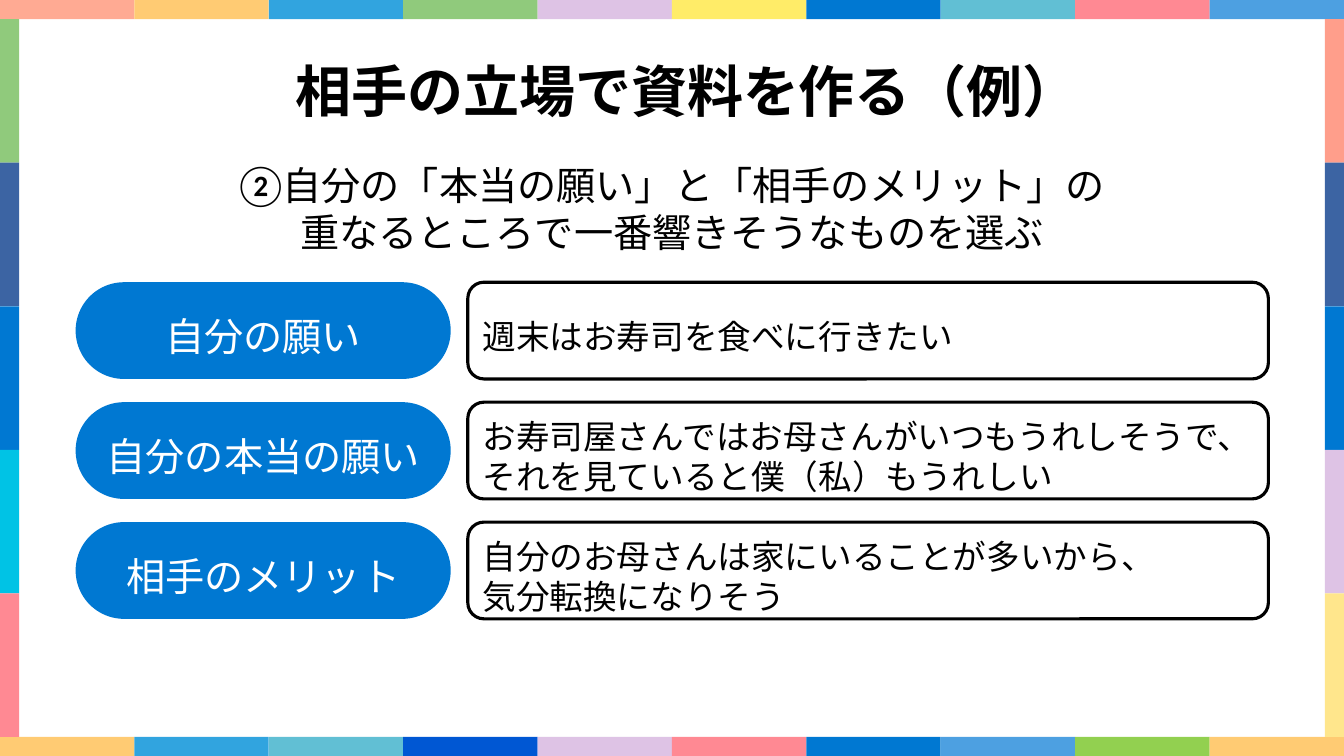
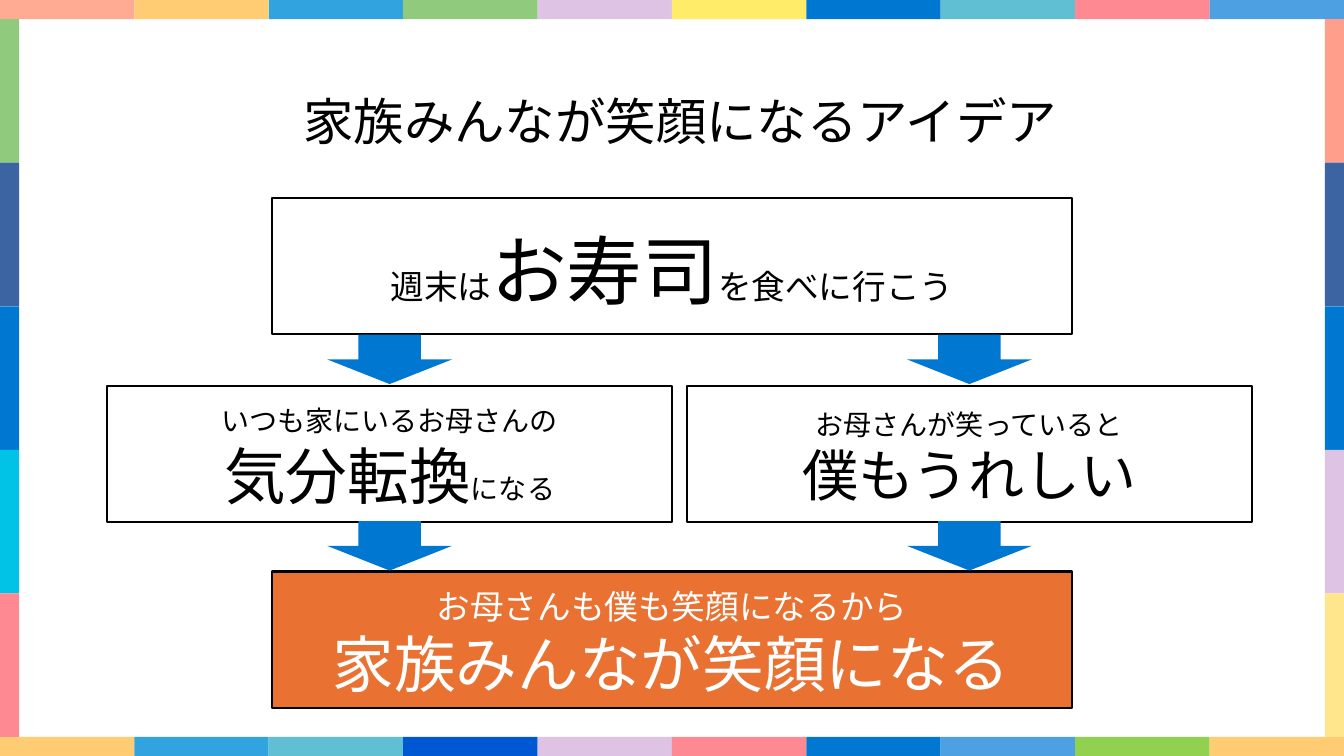
from dataclasses import dataclass

from lxml.etree import SubElement
from pptx import Presentation
from pptx.dml.color import RGBColor
from pptx.enum.lang import MSO_LANGUAGE_ID
from pptx.enum.shapes import MSO_SHAPE, PP_PLACEHOLDER
from pptx.enum.text import MSO_ANCHOR, MSO_AUTO_SIZE, PP_ALIGN
from pptx.oxml.ns import qn
from pptx.util import Inches, Pt

WHITE = RGBColor(0xFF, 0xFF, 0xFF)
BLACK = RGBColor(0x00, 0x00, 0x00)
BLUE = RGBColor(0x00, 0x78, 0xD2)
ORANGE = RGBColor(0xE9, 0x71, 0x32)
SKY = RGBColor(0x31, 0xA4, 0xDF)
GREEN = RGBColor(0x90, 0xCA, 0x7C)
LIME = RGBColor(0x92, 0xD0, 0x50)
LILAC = RGBColor(0xDE, 0xC3, 0xE5)
YELLOW = RGBColor(0xFF, 0xEC, 0x68)
CREAM = RGBColor(0xFF, 0xE6, 0x8C)
AMBER = RGBColor(0xFF, 0xCB, 0x73)
PEACH = RGBColor(0xFF, 0xAA, 0x93)
SALMON = RGBColor(0xFF, 0x9E, 0x8B)
PINK = RGBColor(0xFF, 0x89, 0x93)
TEAL = RGBColor(0x61, 0xBF, 0xD4)
CYAN = RGBColor(0x00, 0xC3, 0xE5)
AZURE = RGBColor(0x4D, 0xA0, 0xE1)
COBALT = RGBColor(0x00, 0x57, 0xD3)
NAVY = RGBColor(0x3C, 0x64, 0xA3)

BODY_FONT = "Lato"
TITLE_FONT = "Noto Sans CJK JP"
SLIDE_W, SLIDE_H = 13.33, 7.5
EDGE = 0.19

TOP_COLORS = [PEACH, AMBER, SKY, GREEN, LILAC, YELLOW, BLUE, TEAL, PINK, AZURE]
BOTTOM_COLORS = [AMBER, SKY, TEAL, COBALT, LILAC, PINK, BLUE, AZURE, LIME, AMBER]
LEFT_COLORS = [GREEN, NAVY, BLUE, CYAN, PINK]
RIGHT_COLORS = [SALMON, NAVY, BLUE, LILAC, CREAM]


@dataclass(frozen=True)
class Rect:
    left: float
    top: float
    width: float
    height: float

    def lengths(self):
        return [Inches(v) for v in (self.left, self.top, self.width, self.height)]


@dataclass(frozen=True)
class Span:
    text: str
    size: int


@dataclass(frozen=True)
class Wish:
    label: str
    answer: str


@dataclass(frozen=True)
class Box:
    rect: Rect
    lines: list[list[Span]]
    fill: RGBColor = WHITE
    color: RGBColor = BLACK


def add_span(p, text, size, color, font=BODY_FONT, bold=False):
    r = p.add_run()
    r.text = text
    r.font.name = font
    r.font.size = Pt(size)
    r.font.bold = bold
    r.font.color.rgb = color
    r.font.language_id = MSO_LANGUAGE_ID.JAPANESE
    latin = r.font.fill and r._r.rPr.find(qn("a:latin"))
    ea = SubElement(r._r.rPr, qn("a:ea"), typeface=font)
    latin.addnext(ea)


def set_text(tf, lines: list[list[Span]], color=BLACK, align=PP_ALIGN.CENTER,
             inset_top=0.12, anchor=MSO_ANCHOR.MIDDLE, font=BODY_FONT, bold=False):
    """Write one paragraph per line; a vertical tab in a span breaks the line."""
    tf.word_wrap = True
    tf.auto_size = MSO_AUTO_SIZE.NONE
    tf.vertical_anchor = anchor
    tf.margin_left = tf.margin_right = Inches(0.1)
    tf.margin_top, tf.margin_bottom = Inches(inset_top), Inches(0.05)
    for i, spans in enumerate(lines):
        p = tf.add_paragraph() if i else tf.paragraphs[0]
        p.alignment = align
        for span in spans:
            for j, part in enumerate(span.text.split("\v")):
                if j:
                    p.add_line_break()
                add_span(p, part, span.size, color, font, bold)


def add_box(s, kind, rect: Rect, fill: RGBColor, line_width: float = 0):
    sp = s.shapes.add_shape(kind, *rect.lengths())
    sp.shadow.inherit = False
    sp.fill.solid()
    sp.fill.fore_color.rgb = fill
    if line_width:
        sp.line.color.rgb = BLACK
        sp.line.width = Pt(line_width)
    else:
        sp.line.fill.background()
    return sp


def place_title(s, rect: Rect):
    title = s.shapes.title
    title.left, title.top, title.width, title.height = rect.lengths()
    return title.text_frame


def add_frame(s, layout):
    """Draw the coloured border and move it to the layout, so all slides share it."""
    for ph in list(layout.placeholders):
        if ph.placeholder_format.type != PP_PLACEHOLDER.TITLE:
            ph.element.getparent().remove(ph.element)
    tile_w = SLIDE_W / len(TOP_COLORS)
    tile_h = (SLIDE_H - 2 * EDGE) / len(LEFT_COLORS) + 0.02
    tiles = []
    for top, colors in ((0, TOP_COLORS), (SLIDE_H - EDGE, BOTTOM_COLORS)):
        tiles += [(Rect(i * tile_w, top, tile_w, EDGE), c) for i, c in enumerate(colors)]
    for left, colors in ((0, LEFT_COLORS), (SLIDE_W - EDGE, RIGHT_COLORS)):
        tiles += [(Rect(left, EDGE + i * (tile_h - 0.02), EDGE, tile_h - 0.02), c)
                  for i, c in enumerate(colors)]
    for rect, color in tiles:
        sp = add_box(s, MSO_SHAPE.RECTANGLE, rect, color)
        layout.shapes.element.append(sp.element)


def build_wishes(s):
    set_text(place_title(s, Rect(1.59, 0.59, 10.45, 0.77)),
             [[Span("相手の立場で資料を作る（例）", 40)]],
             inset_top=0.05, anchor=MSO_ANCHOR.TOP, font=TITLE_FONT, bold=True)
    s.shapes.title.text_frame.paragraphs[0].line_spacing = 0.9

    lead = s.shapes.add_textbox(*Rect(2.23, 1.37, 8.87, 1.33).lengths())
    set_text(lead.text_frame, [
        [Span("②自分の「本当の願い」と「相手のメリット」の", 28)],
        [Span("重なるところで一番響きそうなものを選ぶ", 28)],
    ])

    wishes = [
        Wish("自分の願い", "週末はお寿司を食べに行きたい"),
        Wish("自分の本当の願い",
             "お寿司屋さんではお母さんがいつもうれしそうで、\vそれを見ていると僕（私）もうれしい"),
        Wish("相手のメリット", "自分のお母さんは家にいることが多いから、\v気分転換になりそう"),
    ]
    height, pitch = 0.96, 1.19
    for i, wish in enumerate(wishes):
        top = 2.8 + i * pitch
        pill = add_box(s, MSO_SHAPE.ROUNDED_RECTANGLE, Rect(0.75, top, 3.72, height), BLUE)
        pill.adjustments[0] = 0.5
        set_text(pill.text_frame, [[Span(wish.label, 28)]], WHITE, inset_top=0.16)
        answer = add_box(s, MSO_SHAPE.ROUNDED_RECTANGLE,
                         Rect(4.64, top, 7.94, height), WHITE, 2.25)
        set_text(answer.text_frame, [[Span(wish.answer, 24)]],
                 align=PP_ALIGN.LEFT, inset_top=0.16)


def build_idea(s):
    set_text(place_title(s, Rect(1.06, 0.65, 11.37, 1.02)),
             [[Span("家族みんなが笑顔になるアイデア", 36)]])

    wide, half, height = 7.93, 5.61, 1.35
    center_left, half_lefts = 2.7, (1.06, 6.81)
    boxes = [
        Box(Rect(center_left, 1.96, wide, height),
            [[Span("週末は", 24), Span("お寿司", 54), Span("を食べに行こう", 24)]]),
        Box(Rect(half_lefts[0], 3.83, half, height),
            [[Span("いつも家にいるお母さんの", 20)],
             [Span("気分転換", 44), Span("になる", 20)]]),
        Box(Rect(half_lefts[1], 3.83, half, height),
            [[Span("お母さんが笑っていると", 20)], [Span("僕もうれしい", 40)]]),
        Box(Rect(center_left, 5.67, wide, height),
            [[Span("お母さんも僕も笑顔になるから", 24)],
             [Span("家族みんなが笑顔になる", 44)]], ORANGE, WHITE),
    ]
    for box in boxes:
        sp = add_box(s, MSO_SHAPE.RECTANGLE, box.rect, box.fill, 1.5)
        set_text(sp.text_frame, box.lines, box.color)

    arrow_w = 1.24
    for top in (3.32, 5.17):
        for left in half_lefts:
            add_box(s, MSO_SHAPE.DOWN_ARROW,
                    Rect(left + (half - arrow_w) / 2, top, arrow_w, 0.49), BLUE)


def main():
    prs = Presentation()
    prs.slide_width, prs.slide_height = Inches(SLIDE_W), Inches(SLIDE_H)
    layout = prs.slide_layouts.get_by_name("Title Only")
    slides = [prs.slides.add_slide(layout) for _ in range(2)]
    # Tiles get unique ids only while they sit on one slide, so they are moved as they come.
    add_frame(slides[0], layout)
    build_wishes(slides[0])
    build_idea(slides[1])
    prs.save("out.pptx")


if __name__ == "__main__":
    main()
